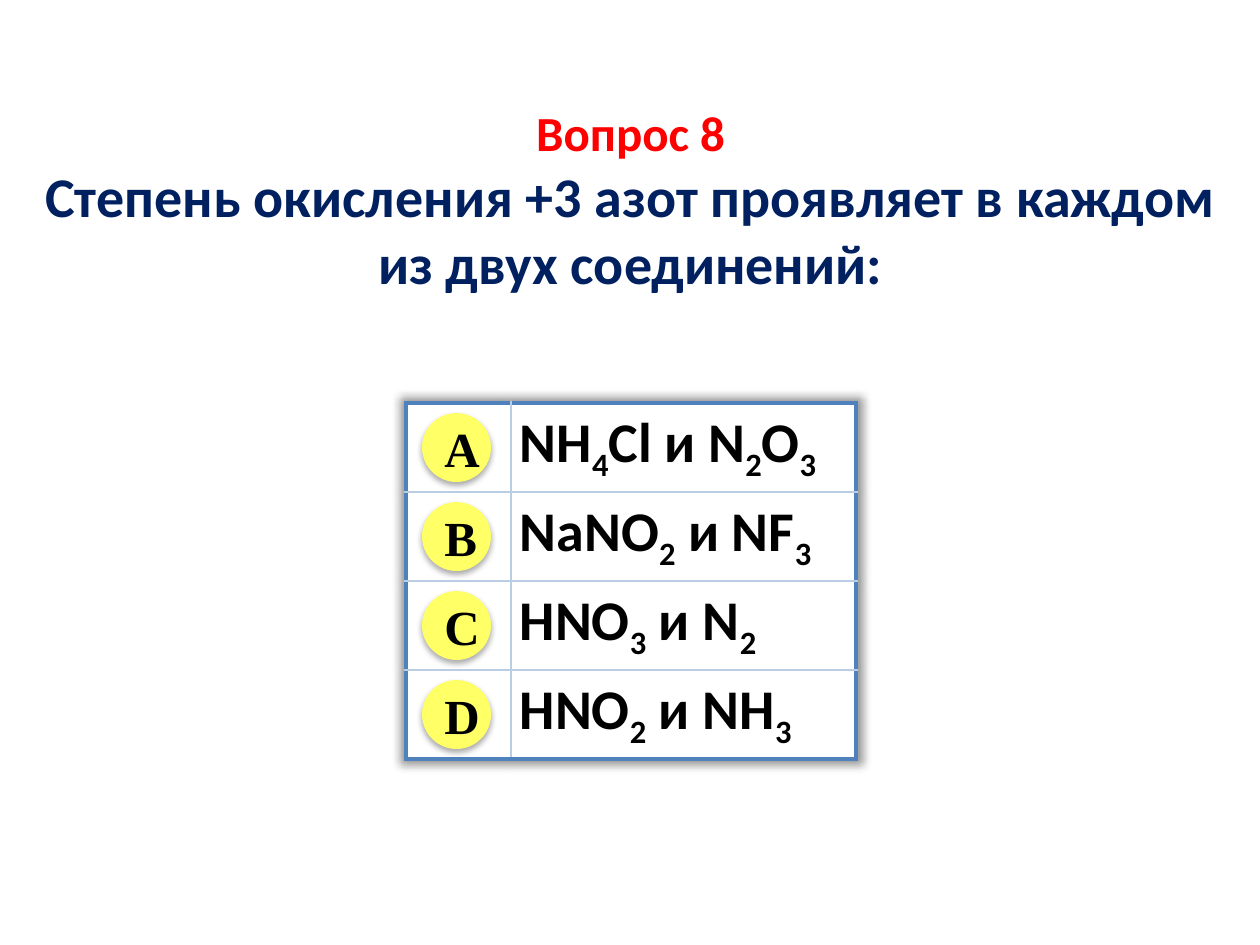
from itertools import groupby

from lxml import etree
from pptx import Presentation
from pptx import util as u
from pptx.dml.color import RGBColor
from pptx.enum import shapes, text
from pptx.oxml.ns import qn

PX_PER_INCH = 126
NAVY, RED, BLACK, WHITE = "002060", "FF0000", "000000", "FFFFFF"
YELLOW, FRAME, GRID = "FFFF66", "4F81BD", "B9CDE5"

# Table and badge layout, in px
TABLE_LEFT, TABLE_TOP, ROW_HEIGHT = 406, 403, 89
COLUMN_WIDTHS = (105, 345)
BADGE_LEFT, BADGE_TOP, BADGE_SIZE = 422, 413, 69

ANSWERS = {
    "A": "NH4Cl и N2O3",
    "B": "NaNO2 и NF3",
    "C": "HNO3 и N2",
    "D": "HNO2 и NH3",
}


def px(length):
    return u.Emu(round(length * 914400 / PX_PER_INCH))


def color(value):
    return RGBColor.from_string(value)


def assign(target, values):
    for name, value in values.items():
        setattr(target, name, value)


def add_solid(parent, value, alpha=None):
    """Append a colour element, optionally transparent (alpha in percent)."""
    node = etree.SubElement(parent, qn("a:srgbClr"), val=value)
    if alpha is not None:
        etree.SubElement(node, qn("a:alpha"), val=str(alpha * 1000))


def add_shadow(effects, alpha, blur, **options):
    shadow = etree.SubElement(effects, qn("a:outerShdw"), blurRad=str(u.Pt(blur)), **options)
    add_solid(shadow, BLACK, alpha)


class QuizSlide:
    def __init__(self, deck):
        self.slide = deck.slides.add_slide(deck.slide_layouts[5])

    def add_span(self, para, words, size, tint, font="Calibri", baseline=None):
        span = para.add_run()
        span.text = words
        assign(span.font, {"name": font, "size": u.Pt(size), "bold": True})
        span.font.color.rgb = color(tint)
        if baseline is not None:
            span.font._element.set("baseline", str(baseline * 1000))

    def title(self, left, top, width, height, lines):
        box = self.slide.shapes.title
        assign(box, {"left": px(left), "top": px(top), "width": px(width), "height": px(height)})
        box.fill.solid()
        box.fill.fore_color.rgb = color(WHITE)
        frame = box.text_frame
        assign(frame, {"word_wrap": True, "vertical_anchor": text.MSO_ANCHOR.TOP,
                       "auto_size": text.MSO_AUTO_SIZE.SHAPE_TO_FIT_TEXT})
        for index, (words, size, tint) in enumerate(lines):
            para = frame.add_paragraph() if index else frame.paragraphs[0]
            para.alignment = text.PP_ALIGN.CENTER
            self.add_span(para, words, size, tint)

    def border(self, cell, side, tint, width, index):
        line = etree.Element(qn(f"a:ln{side}"), w=str(u.Pt(width)))
        add_solid(etree.SubElement(line, qn("a:solidFill")), tint)
        cell._tc.get_or_add_tcPr().insert(index, line)

    def formula(self, para, words):
        """Digits in a formula are subscripts."""
        for is_index, letters in groupby(words, str.isdigit):
            self.add_span(para, "".join(letters), 32, BLACK, baseline=-25 if is_index else None)

    def answer_table(self, formulas):
        count, columns = len(formulas), len(COLUMN_WIDTHS)
        table = self.slide.shapes.add_table(
            count, columns, px(TABLE_LEFT), px(TABLE_TOP),
            px(sum(COLUMN_WIDTHS)), px(ROW_HEIGHT * count)).table
        assign(table, {"first_row": False, "horz_banding": False})
        effects = etree.Element(qn("a:effectLst"))
        add_shadow(effects, 40, 5, sx="102000", sy="102000", algn="ctr")
        table._tbl.tblPr.insert(0, effects)
        for column, width in zip(table.columns, COLUMN_WIDTHS):
            column.width = px(width)
        for r, words in enumerate(formulas):
            table.rows[r].height = px(ROW_HEIGHT)
            for c in range(columns):
                cell = table.cell(r, c)
                assign(cell, {"margin_left": u.Inches(0.07), "margin_right": u.Inches(0.07),
                              "margin_top": 0, "margin_bottom": 0,
                              "vertical_anchor": text.MSO_ANCHOR.MIDDLE})
                cell.fill.solid()
                cell.fill.fore_color.rgb = color(WHITE)
                outer = {"L": c == 0, "R": c == columns - 1, "T": r == 0, "B": r == count - 1}
                for index, (side, is_outer) in enumerate(outer.items()):
                    self.border(cell, side, *((FRAME, 3) if is_outer else (GRID, 1)), index)
            self.formula(table.cell(r, 1).text_frame.paragraphs[0], words)

    def badge(self, left, top, size, letter):
        shape = self.slide.shapes.add_shape(
            shapes.MSO_SHAPE.OVAL, px(left), px(top), px(size), px(size))
        shape.fill.solid()
        shape.fill.fore_color.rgb = color(YELLOW)
        shape.line.fill.background()
        shape.shadow.inherit = False
        add_shadow(shape._element.spPr.find(qn("a:effectLst")), 32, 3.5,
                   dist=str(u.Pt(2.2)), dir="5400000", rotWithShape="0")
        shape.text_frame.vertical_anchor = text.MSO_ANCHOR.MIDDLE
        para = shape.text_frame.paragraphs[0]
        para.alignment = text.PP_ALIGN.CENTER
        self.add_span(para, letter, 28, BLACK, "Times New Roman")


def main():
    deck = Presentation()
    assign(deck, {"slide_width": u.Inches(10), "slide_height": u.Inches(7.5)})
    page = QuizSlide(deck)

    # Question
    page.title(30, 96, 1201, 208, [
        ("Вопрос 8", 28, RED),
        ("Степень окисления +3 азот проявляет в каждом из двух соединений:", 32, NAVY),
    ])

    # Answers with their letters
    page.answer_table(list(ANSWERS.values()))
    for row, letter in enumerate(ANSWERS):
        page.badge(BADGE_LEFT, BADGE_TOP + row * ROW_HEIGHT, BADGE_SIZE, letter)

    deck.save("out.pptx")


if __name__ == "__main__":
    main()
